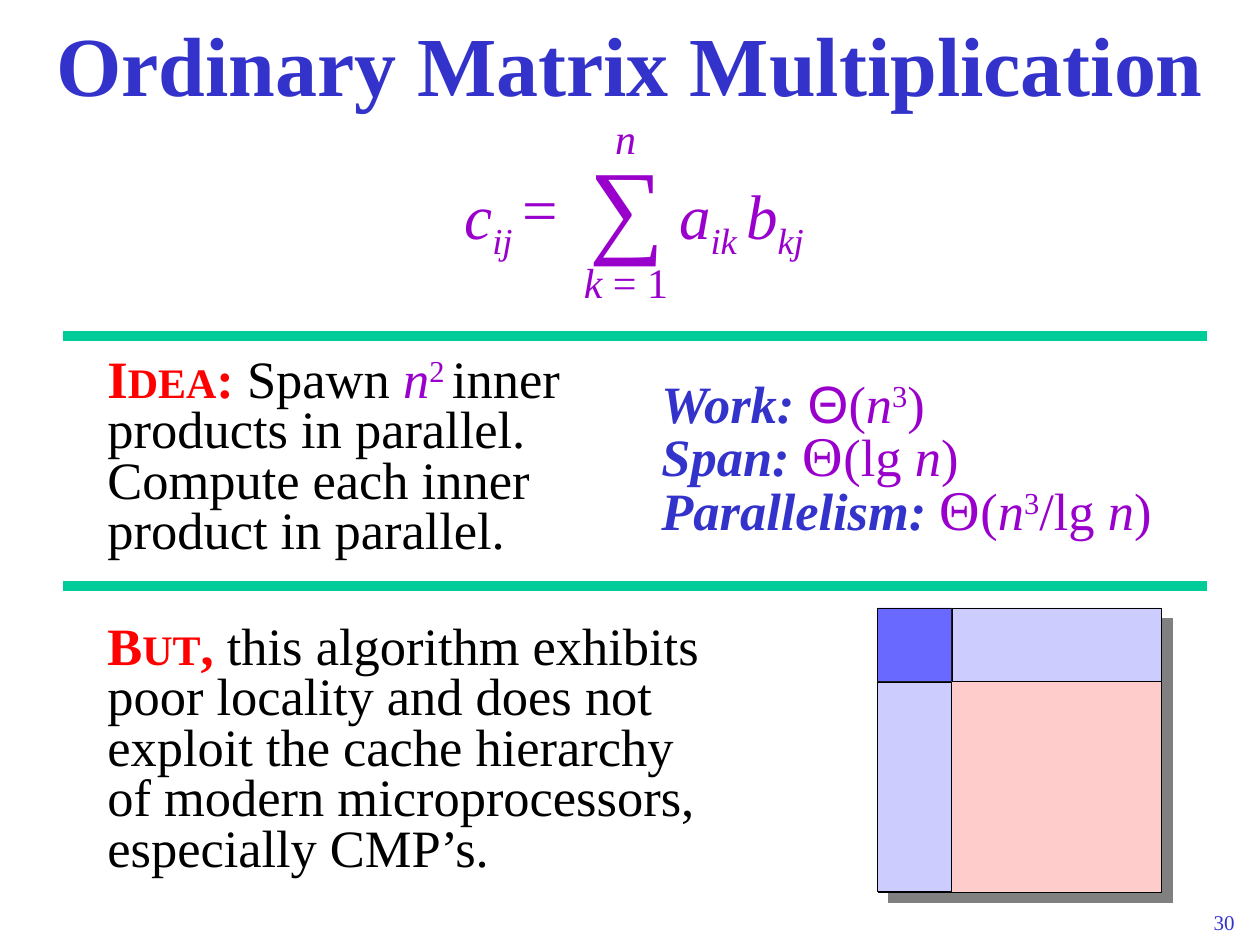
from dataclasses import dataclass

from lxml import etree
from pptx import Presentation
from pptx.dml.color import RGBColor
from pptx.enum import shapes, text
from pptx.oxml import ns
from pptx import util as u


@dataclass(frozen=True)
class Theme:
    serif: str = "Times New Roman"
    sans: str = "Arial"
    blue: str = "3333CC"
    purple: str = "9900CC"
    red: str = "FF0000"
    black: str = "000000"
    green: str = "00CC99"
    gray: str = "808080"
    corner: str = "6969FF"
    strip: str = "CCCCFF"
    block: str = "FFCCCC"
    title: int = 48
    sigma: int = 60
    formula: int = 36
    theta: int = 32
    body: int = 30
    small: int = 24
    number: int = 12


T = Theme()
PX = u.Inches(1) / 126
ALIGN = {"l": text.PP_ALIGN.LEFT, "c": text.PP_ALIGN.CENTER, "r": text.PP_ALIGN.RIGHT}
BASELINES = {"^": "30000", "_": "-25000"}


def box(*px):
    return [round(v * PX) for v in px]


def write(tf, paragraphs, align="l", spacing=0.8):
    for i, runs in enumerate(paragraphs):
        p = tf.add_paragraph() if i else tf.paragraphs[0]
        p.alignment = ALIGN[align]
        p.line_spacing = spacing
        for words, size, color, flags in runs:
            r = p.add_run()
            r.text = words
            r.font.name = T.sans if "s" in flags else T.serif
            r.font.size = u.Pt(size)
            r.font.bold = "b" in flags
            r.font.italic = "i" in flags
            r.font.color.rgb = RGBColor.from_string(color)
            for mark, shift in BASELINES.items():
                if mark in flags:
                    r.font._element.set("baseline", shift)


prs = Presentation()
prs.slide_width, prs.slide_height = box(1260, 945)
s = prs.slides.add_slide(prs.slide_layouts[5])

title = s.shapes.title
title.left, title.top, title.width, title.height = box(0, 0, 1260, 126)
tf = title.text_frame
tf.auto_size = text.MSO_AUTO_SIZE.NONE
tf.vertical_anchor = text.MSO_ANCHOR.MIDDLE
write(tf, [[("Ordinary Matrix Multiplication", T.title, T.blue, "b")]], "c", 1.0)

formula = [
    ((450, 178, 77, 73), [("c", T.formula, T.purple, "i"), ("ij", T.formula, T.purple, "i_")]),
    ((510, 178, 60, 73), [("=", T.formula, T.purple, "")]),
    ((576, 158, 101, 113), [("∑", T.sigma, T.purple, "")]),
    ((571, 260, 110, 53), [("k ", T.small, T.purple, "i"), ("= 1", T.small, T.purple, "")]),
    ((602, 116, 47, 53), [("n", T.small, T.purple, "i")]),
    ((662, 178, 159, 73), [
        ("a", T.formula, T.purple, "i"), ("ik ", T.formula, T.purple, "i_"),
        ("b", T.formula, T.purple, "i"), ("kj", T.formula, T.purple, "i_"),
    ]),
]
idea = [
    ("I", T.body, T.red, "b"), ("DEA", T.small, T.red, "b"), (":", T.body, T.red, "b"),
    (" Spawn ", T.body, T.black, ""),
    ("n", T.body, T.purple, "i"), ("2 ", T.body, T.purple, "^"),
    ("inner products in parallel. Compute each inner product in parallel.", T.body, T.black, ""),
]
costs = [
    [
        ("Work: ", T.body, T.blue, "bi"), ("Θ", T.body, T.purple, "s"),
        ("(", T.body, T.purple, ""), ("n", T.body, T.purple, "i"),
        ("3", T.body, T.purple, "^"), (")", T.body, T.purple, ""),
    ],
    [
        ("Span: ", T.body, T.blue, "bi"), ("Θ", T.theta, T.purple, ""),
        ("(lg ", T.body, T.purple, ""), ("n", T.body, T.purple, "i"),
        (")", T.body, T.purple, ""),
    ],
    [
        ("Parallelism: ", T.body, T.blue, "bi"), ("Θ", T.theta, T.purple, ""),
        ("(", T.body, T.purple, ""), ("n", T.body, T.purple, "i"),
        ("3", T.body, T.purple, "^"), ("/lg ", T.body, T.purple, ""),
        ("n", T.body, T.purple, "i"), (")", T.body, T.purple, ""),
    ],
]
drawback = [
    ("B", T.body, T.red, "b"), ("UT", T.small, T.red, "b"), (",", T.body, T.red, "b"),
    (" this algorithm exhibits poor locality and does not exploit the cache hierarchy "
     "of modern microprocessors, especially CMP’s.", T.body, T.black, ""),
]
number = [("30", T.number, T.blue, "")]

blocks = [(place, [runs], "c", False, 0.8) for place, runs in formula] + [
    ((95, 352, 504, 214), [idea], "l", True, 0.8),
    ((649, 377, 515, 170), costs, "l", False, 0.8),
    ((95, 619, 640, 265), [drawback], "l", True, 0.8),
    ((932, 903, 315, 42), [number], "r", True, 1.0),
]
for place, paragraphs, align, wrap, spacing in blocks:
    tf = s.shapes.add_textbox(*box(*place)).text_frame
    tf.word_wrap = wrap
    tf.auto_size = text.MSO_AUTO_SIZE.SHAPE_TO_FIT_TEXT
    write(tf, paragraphs, align, spacing)

for y in (336, 586):
    rule = s.shapes.add_connector(shapes.MSO_CONNECTOR.STRAIGHT, *box(63, y, 1207, y))
    rule.line.color.rgb = RGBColor.from_string(T.green)
    rule.line.width = u.Pt(6)
    etree.SubElement(rule._element.spPr, ns.qn("a:effectLst"))

left, top, near, far = 878, 608, 74, 210
matrix = [
    (0, 0, near + far, near + far, T.block),
    (0, 0, near, near, T.corner),
    (0, near, near, far, T.strip),
    (near, 0, far, near, T.strip),
]
for i, (x, y, w, h, color) in enumerate(matrix):
    sp = s.shapes.add_shape(shapes.MSO_SHAPE.RECTANGLE, *box(left + x, top + y, w, h))
    sp.fill.solid()
    sp.fill.fore_color.rgb = RGBColor.from_string(color)
    sp.line.color.rgb = RGBColor.from_string(T.black)
    sp.line.width = u.Pt(0.5)
    sp.shadow.inherit = False
    if i == 0:
        effects = sp._element.spPr.find(ns.qn("a:effectLst"))
        shadow = etree.SubElement(
            effects, ns.qn("a:outerShdw"), dist=str(u.Pt(8.5)), dir="2700000", algn="ctr", rotWithShape="0"
        )
        etree.SubElement(shadow, ns.qn("a:srgbClr"), val=T.gray)

prs.save("out.pptx")
